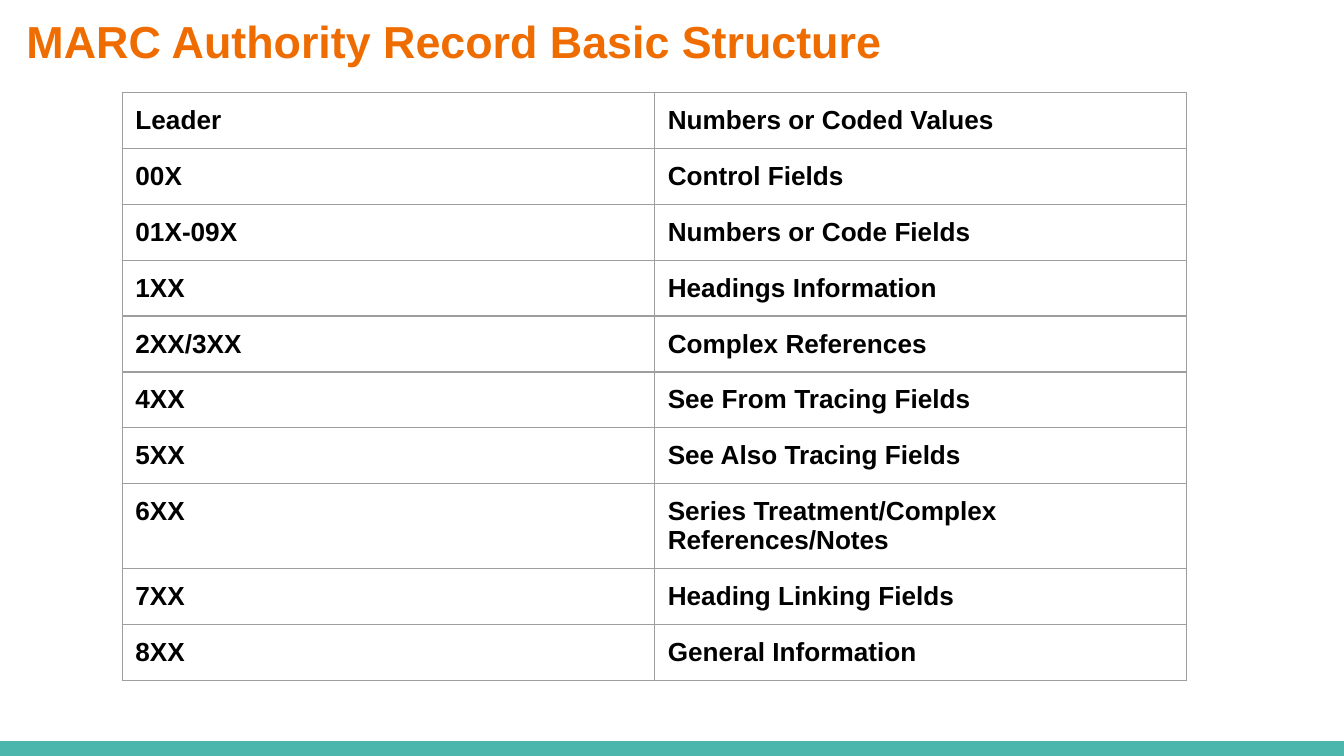
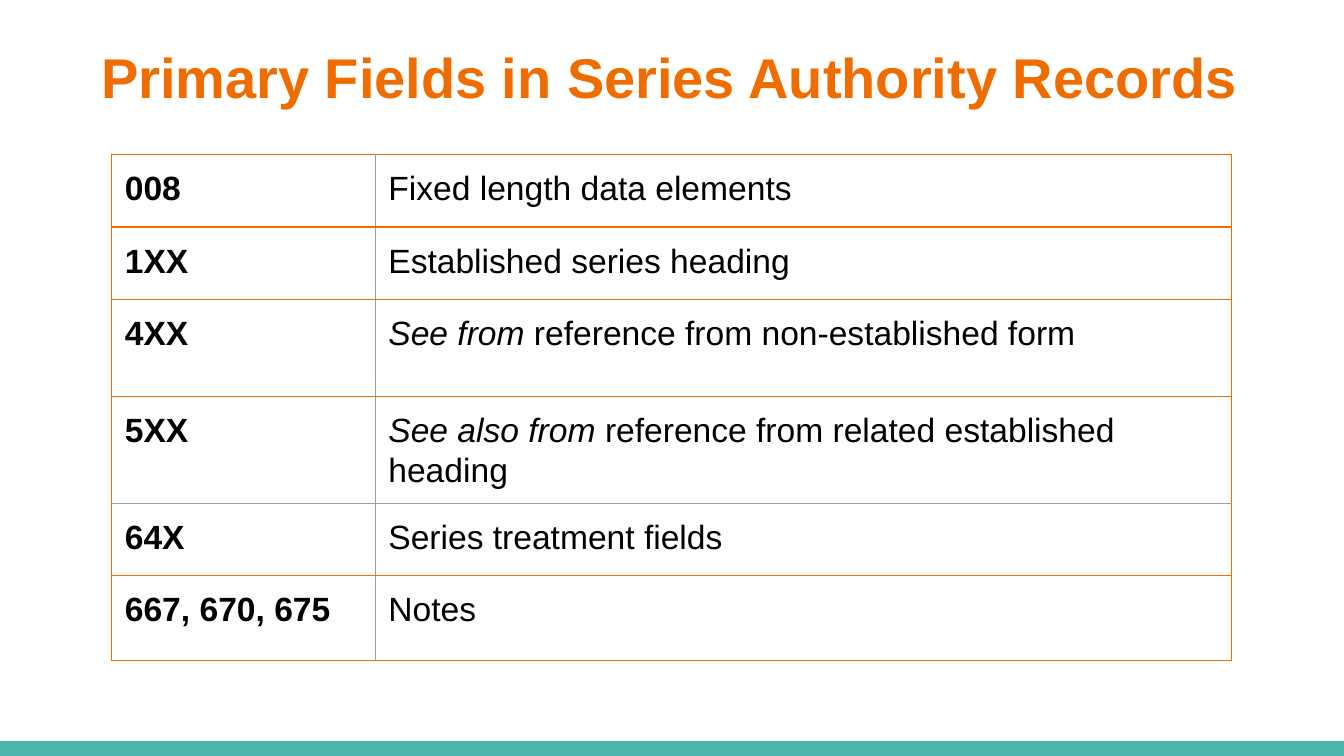
from lxml import etree
from pptx import Presentation
from pptx.dml.color import RGBColor
from pptx.enum import shapes, text
from pptx.oxml import ns
from pptx.util import Cm, Pt

FONT = "Arial"
ORANGE = "EF6C00"
TEAL = "4DB6AC"
GREY = "9E9E9E"
BLACK = "000000"
INSET = Cm(0.25)
SLIDE_WIDTH, SLIDE_HEIGHT = Cm(25.4), Cm(14.29)
BAND_HEIGHT = Cm(0.28)

STRUCTURE_ROWS = [
    ("Leader", "Numbers or Coded Values"),
    ("00X", "Control Fields"),
    ("01X-09X", "Numbers or Code Fields"),
    ("1XX", "Headings Information"),
    ("2XX/3XX", "Complex References"),
    ("4XX", "See From Tracing Fields"),
    ("5XX", "See Also Tracing Fields"),
    ("6XX", "Series Treatment/Complex References/Notes"),
    ("7XX", "Heading Linking Fields"),
    ("8XX", "General Information"),
]

# Field, italic lead-in, plain description, row height in cm
PRIMARY_FIELDS = [
    ("008", "", "Fixed length data elements", 1.37),
    ("1XX", "", "Established series heading", 1.37),
    ("4XX", "See from", " reference from non-established form", 1.83),
    ("5XX", "See also from", " reference from related established heading", 1.63),
    ("64X", "", "Series treatment fields", 1.37),
    ("667, 670, 675", "", "Notes", 1.6),
]


def color(value):
    return RGBColor.from_string(value)


def add_run(paragraph, words, size, fill=BLACK, bold=False, italic=False):
    run = paragraph.add_run()
    run.text = words
    font = run.font
    font.name, font.size = FONT, Pt(size)
    font.bold, font.italic = bold, italic
    font.color.rgb = color(fill)


def add_master_band(presentation, slide):
    """Draw the bottom band and move it to the slide master."""
    band = slide.shapes.add_shape(
        shapes.MSO_SHAPE.RECTANGLE, 0, SLIDE_HEIGHT - BAND_HEIGHT, SLIDE_WIDTH, BAND_HEIGHT)
    band.shadow.inherit = False
    band.fill.solid()
    band.fill.fore_color.rgb = color(TEAL)
    band.line.fill.background()
    presentation.slide_master.shapes.element.insert(2, band.element)


def add_title(slide, box, words, size, alignment, line_spacing=1.0):
    title = slide.shapes.title
    title.left, title.top, title.width, title.height = box
    frame = title.text_frame
    frame.auto_size = text.MSO_AUTO_SIZE.NONE
    frame.word_wrap = True
    frame.vertical_anchor = text.MSO_ANCHOR.TOP
    frame.margin_left = frame.margin_right = INSET
    frame.margin_top = frame.margin_bottom = INSET
    paragraph = frame.paragraphs[0]
    paragraph.alignment = alignment
    paragraph.line_spacing = line_spacing
    add_run(paragraph, words, size, ORANGE, bold=True)


def set_border(cell, side, line_color):
    properties = cell._tc.get_or_add_tcPr()
    line = etree.SubElement(properties, ns.qn(f"a:ln{side}"), w=str(Pt(0.75)))
    fill = etree.SubElement(line, ns.qn("a:solidFill"))
    etree.SubElement(fill, ns.qn("a:srgbClr"), val=line_color)


def add_table(slide, left, top, widths, heights, cells, size, line_color,
              divider_color, grey_after=None, line_spacing=1.0):
    """Fill a bordered grid; each cell is a list of (words, bold, italic) runs."""
    table = slide.shapes.add_table(
        len(heights), len(widths), left, top, sum(widths), sum(heights)).table
    table.first_row = table.horz_banding = False
    for column, width in zip(table.columns, widths):
        column.width = width
    for row, height in zip(table.rows, heights):
        row.height = height
    for row_index, row in enumerate(cells):
        for column_index, runs in enumerate(row):
            cell = table.cell(row_index, column_index)
            cell.margin_left = cell.margin_right = INSET
            cell.margin_top = cell.margin_bottom = INSET
            paragraph = cell.text_frame.paragraphs[0]
            paragraph.line_spacing = line_spacing
            for words, bold, italic in runs:
                add_run(paragraph, words, size, bold=bold, italic=italic)
            last_column = column_index == len(widths) - 1
            grey_top = grey_after is not None and row_index == grey_after + 1
            borders = {
                "L": divider_color if column_index else line_color,
                "R": line_color if last_column else divider_color,
                "T": GREY if grey_top else line_color,
                "B": GREY if row_index == grey_after else line_color,
            }
            for side, border_color in borders.items():
                set_border(cell, side, border_color)
            cell.fill.background()


def build_structure_slide(slide):
    add_title(slide, (Cm(0.25), 0, Cm(23.67), Cm(1.27)),
              "MARC Authority Record Basic Structure", 24, text.PP_ALIGN.LEFT)
    cells = [[[(words, True, False)] for words in row] for row in STRUCTURE_ROWS]
    heights = [Cm(1.55 if tag == "6XX" else 1.02) for tag, _ in STRUCTURE_ROWS]
    add_table(slide, Cm(2.31), Cm(1.75), [Cm(10.06)] * 2, heights, cells, 14, GREY, GREY)


def build_primary_fields_slide(slide):
    add_title(slide, (Cm(0.48), Cm(0.69), Cm(24.64), Cm(1.83)),
              "Primary Fields in Series Authority Records ", 30,
              text.PP_ALIGN.CENTER, line_spacing=0.9)
    cells = []
    for tag, lead, description, _ in PRIMARY_FIELDS:
        lead_runs = [(lead, False, True)] if lead else []
        cells.append([[(tag, True, False)], lead_runs + [(description, False, False)]])
    heights = [Cm(field[-1]) for field in PRIMARY_FIELDS]
    add_table(slide, Cm(2.11), Cm(2.92), [Cm(4.98), Cm(16.18)], heights, cells, 18,
              ORANGE, GREY, grey_after=3, line_spacing=1.07)


def main():
    presentation = Presentation()
    presentation.slide_width, presentation.slide_height = SLIDE_WIDTH, SLIDE_HEIGHT
    title_only = presentation.slide_layouts[5]
    builders = [build_structure_slide, build_primary_fields_slide]
    for build in builders:
        build(presentation.slides.add_slide(title_only))
    add_master_band(presentation, presentation.slides[0])
    presentation.save("out.pptx")


if __name__ == "__main__":
    main()
